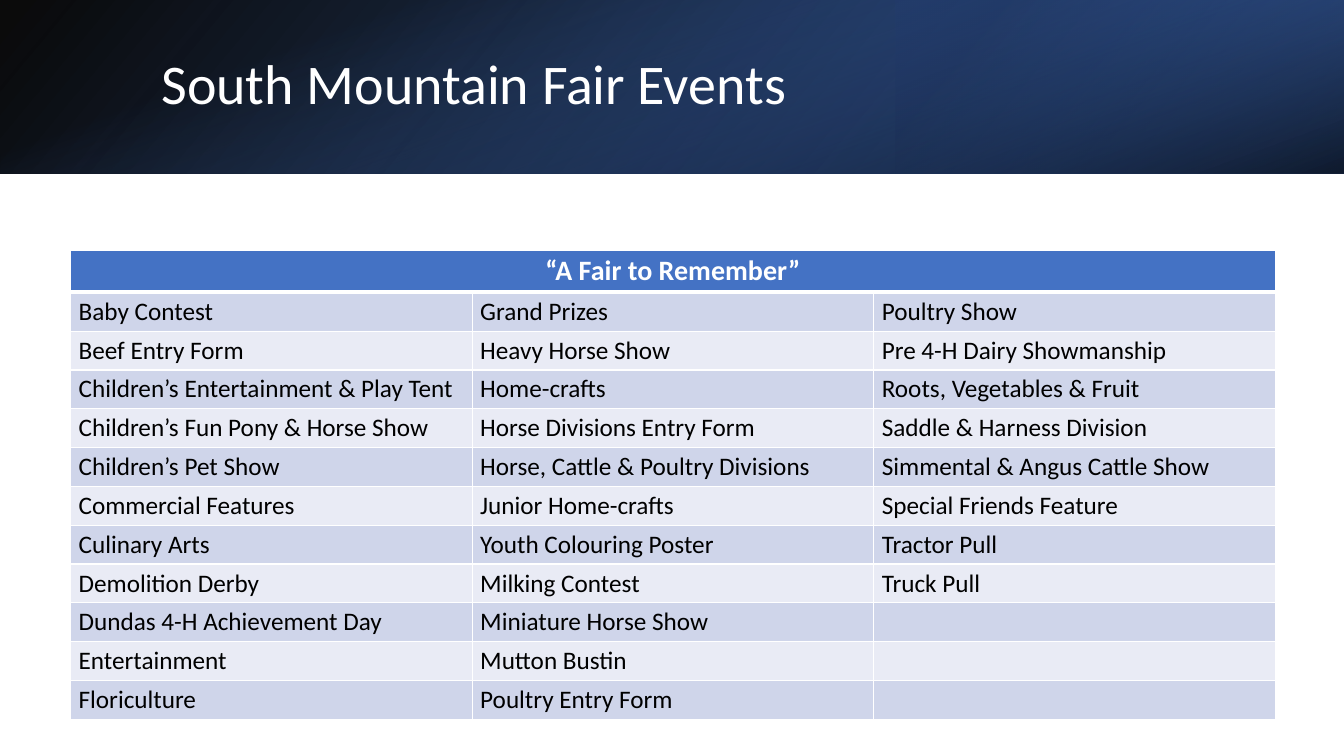
from lxml import etree
from pptx import Presentation
from pptx import util as u
from pptx.dml.color import RGBColor
from pptx.enum import shapes, text
from pptx.oxml.ns import qn

TITLE = "South Mountain Fair Events"
MOTTO = "“A Fair to Remember”"
EVENTS = [  # one list per column
    ["Baby Contest", "Beef Entry Form", "Children’s Entertainment & Play Tent",
     "Children’s Fun Pony & Horse Show", "Children’s Pet Show", "Commercial Features",
     "Culinary Arts", "Demolition Derby", "Dundas 4-H Achievement Day",
     "Entertainment", "Floriculture"],
    ["Grand Prizes", "Heavy Horse Show", "Home-crafts", "Horse Divisions Entry Form",
     "Horse, Cattle & Poultry Divisions", "Junior Home-crafts", "Youth Colouring Poster",
     "Milking Contest", "Miniature Horse Show", "Mutton Bustin", "Poultry Entry Form"],
    ["Poultry Show", "Pre 4-H Dairy Showmanship", "Roots, Vegetables & Fruit",
     "Saddle & Harness Division", "Simmental & Angus Cattle Show",
     "Special Friends Feature", "Tractor Pull", "Truck Pull"],
]
THEME = {
    "font": "Calibri", "title": 40, "motto": 20, "event": 18,
    "white": "FFFFFF", "black": "000000", "header": "4472C4",
    "bands": ("CFD5EA", "E9EBF5"),
}
WIDTH, HEIGHT, BANNER = 13.33, 7.5, 1.72
# box, rotation, flipped, gradient angle, stops of (position, colour, opacity)
BANNER_LAYERS = [
    ((0, 0, WIDTH, BANNER), 0, True, 140, [(0, "000000", 96), (100, "2F5597", 100)]),
    ((WIDTH * 2 / 3, 0, WIDTH / 3, BANNER), 180, True, 320,
     [(19, "203864", 68), (100, "4472C4", 79)]),
    (((WIDTH - BANNER) / 2, (BANNER - WIDTH) / 2, BANNER, WIDTH), 90, False, 340,
     [(23, "4472C4", 0), (99, "000000", 74)]),
]
TITLE_BOX = (1.5, 0.38, 10.98, 0.96)
TABLE_LEFT, TABLE_TOP, TABLE_WIDTH = 0.7, 2.48, 11.95
HEADER_ROW, EVENT_ROW = 0.4, 0.35


def inches(box):
    return [u.Inches(value) for value in box]


def add_node(parent, tag, **attributes):
    values = {name: str(value) for name, value in attributes.items()}
    return etree.SubElement(parent, qn(tag), values)


def write(frame, words, size, colour, align, **font_format):
    frame.text = words
    para = frame.paragraphs[0]
    para.alignment = align
    font_format.update(name=THEME["font"], size=u.Pt(size))
    for font in [para.font] + [span.font for span in para.runs]:
        for name, value in font_format.items():
            setattr(font, name, value)
        font.color.rgb = RGBColor.from_string(colour)
    return para


def add_banner_layer(slide, box, rotation, flipped, angle, stops):
    layer = slide.shapes.add_shape(shapes.MSO_SHAPE.RECTANGLE, *inches(box))
    layer.shadow.inherit = False
    layer.line.fill.background()
    layer.rotation = rotation
    if flipped:
        layer._element.spPr.xfrm.set("flipH", "1")
    layer.fill.gradient()
    gradient = layer._element.spPr.find(qn("a:gradFill"))
    for child in list(gradient):
        gradient.remove(child)
    gradient.set("rotWithShape", "1")
    stop_list = add_node(gradient, "a:gsLst")
    for position, colour, opacity in stops:
        stop = add_node(stop_list, "a:gs", pos=position * 1000)
        add_node(add_node(stop, "a:srgbClr", val=colour), "a:alpha", val=opacity * 1000)
    add_node(gradient, "a:lin", ang=angle * 60000, scaled=0)


def format_cell(cell, fill, top, bottom):
    """Give the cell white rules, of the given points above and below, and a fill."""
    properties = cell._tc.get_or_add_tcPr()
    for side, points in (("L", 1), ("R", 1), ("T", top), ("B", bottom)):
        rule = add_node(properties, f"a:ln{side}", w=u.Pt(points))
        add_node(add_node(rule, "a:solidFill"), "a:srgbClr", val=THEME["white"])
    cell.fill.solid()
    cell.fill.fore_color.rgb = RGBColor.from_string(fill)
    margins = {"margin_left": 0.08, "margin_right": 0.08,
               "margin_top": 0.04, "margin_bottom": 0.04}
    for name, value in margins.items():
        setattr(cell, name, u.Inches(value))


def add_title(slide):
    title = slide.shapes.title
    title.left, title.top, title.width, title.height = inches(TITLE_BOX)
    frame = title.text_frame
    frame.word_wrap = True
    frame.auto_size = text.MSO_AUTO_SIZE.NONE
    frame.vertical_anchor = text.MSO_ANCHOR.MIDDLE
    para = write(frame, TITLE, THEME["title"], THEME["white"], text.PP_ALIGN.LEFT)
    para.line_spacing = 0.9
    slide.shapes._spTree.append(title._element)  # bring in front of the banner


def add_events_table(slide):
    count, columns = max(map(len, EVENTS)), len(EVENTS)
    box = (TABLE_LEFT, TABLE_TOP, TABLE_WIDTH, HEADER_ROW + count * EVENT_ROW)
    table = slide.shapes.add_table(count + 1, columns, *inches(box)).table
    for column in table.columns:
        column.width = u.Inches(TABLE_WIDTH / columns)
    for index, row in enumerate(table.rows):
        row.height = u.Inches(EVENT_ROW if index else HEADER_ROW)
        fill = THEME["bands"][(index - 1) % 2] if index else THEME["header"]
        for cell in row.cells:
            format_cell(cell, fill, 3 if index == 1 else 1, 1 if index else 3)
    table.cell(0, 0).merge(table.cell(0, columns - 1))
    write(table.cell(0, 0).text_frame, MOTTO, THEME["motto"], THEME["white"],
          text.PP_ALIGN.CENTER, bold=True)
    for column, events in enumerate(EVENTS):
        for row, event in enumerate(events, start=1):
            write(table.cell(row, column).text_frame, event, THEME["event"],
                  THEME["black"], text.PP_ALIGN.LEFT, bold=False)


def main():
    deck = Presentation()
    deck.slide_width, deck.slide_height = inches((WIDTH, HEIGHT))
    slide = deck.slides.add_slide(deck.slide_layouts.get_by_name("Title Only"))
    for layer in BANNER_LAYERS:
        add_banner_layer(slide, *layer)
    add_title(slide)
    add_events_table(slide)
    deck.save("out.pptx")


if __name__ == "__main__":
    main()
